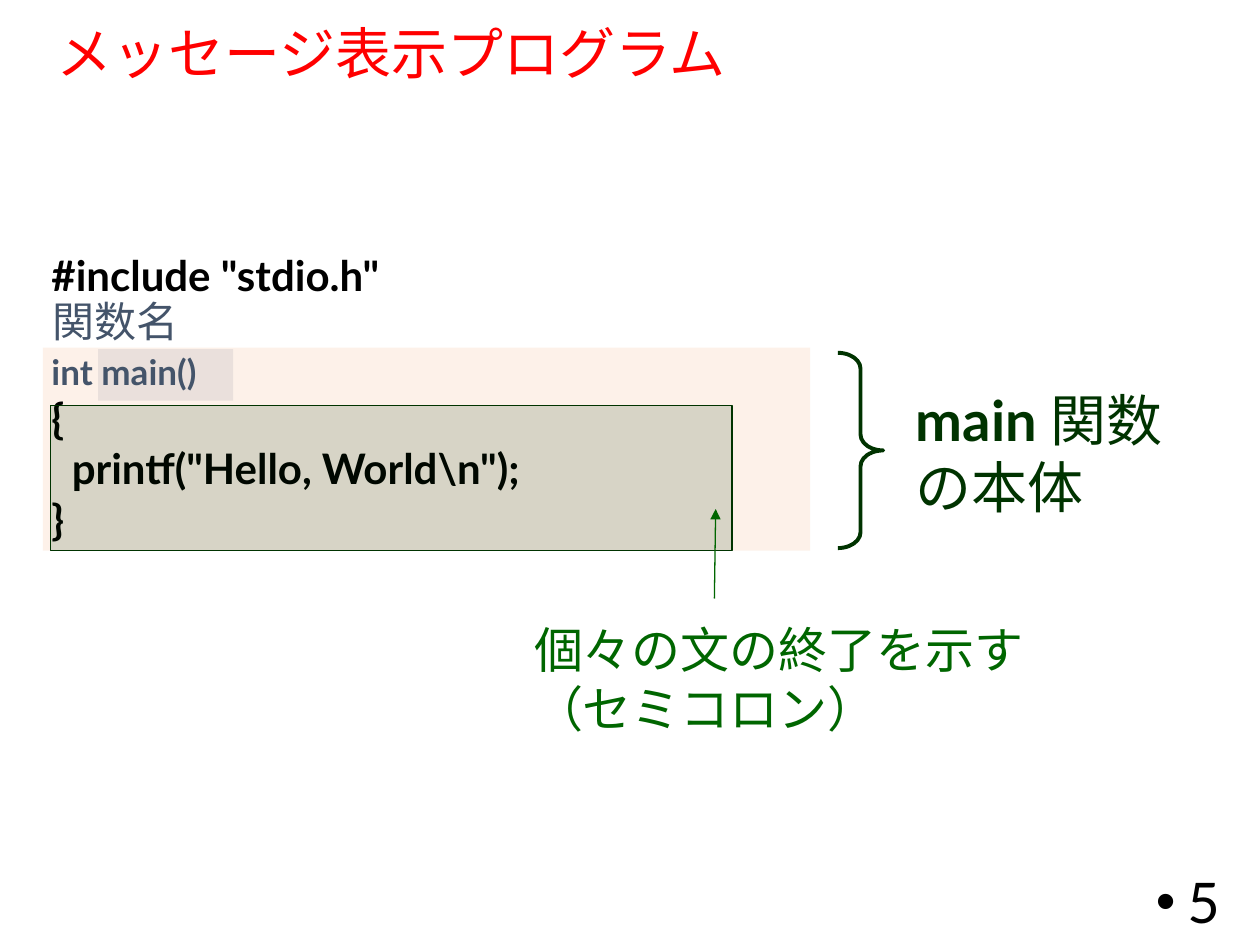
"""Build a slide that explains the parts of a small C program."""
from dataclasses import dataclass
from typing import Optional

import pptx
import pptx.dml.color
import pptx.enum.shapes
import pptx.enum.text
import pptx.oxml
import pptx.oxml.ns
import pptx.util

Inches = pptx.util.Inches
Pt = pptx.util.Pt
Anchor = pptx.enum.text.MSO_ANCHOR
Align = pptx.enum.text.PP_ALIGN
Shape = pptx.enum.shapes.MSO_SHAPE

FONT = "Lato"
BLACK, RED, ORANGE = "000000", "FF0000", "ED7D31"
SLATE, GREEN, DARK_GREEN = "44546A", "006600", "003300"


@dataclass
class Span:
    text: str
    size: float
    color: str
    bold: bool = False


@dataclass
class Region:
    left: float
    top: float
    width: float
    height: float
    color: str
    opacity: int
    outlined: bool = False


def rgb(color: str):
    """Return the colour for a hex string."""
    return pptx.dml.color.RGBColor.from_string(color)


def add_xml(parent, tag: str, **attributes: str):
    """Append a drawing element with the given attributes."""
    element = pptx.oxml.parse_xml(f"<a:{tag} {pptx.oxml.ns.nsdecls('a')}/>")
    for name, value in attributes.items():
        element.set(name, value)
    parent.append(element)
    return element


def add_region(page, region: Region) -> None:
    """Draw a translucent rectangle over part of the program."""
    shape = page.shapes.add_shape(
        Shape.RECTANGLE, Inches(region.left), Inches(region.top),
        Inches(region.width), Inches(region.height))
    shape.shadow.inherit = False
    shape.fill.solid()
    shape.fill.fore_color.rgb = rgb(region.color)
    fill_color = shape._element.spPr.find(".//" + pptx.oxml.ns.qn("a:srgbClr"))
    add_xml(fill_color, "alpha", val=str(region.opacity * 1000))
    if region.outlined:
        shape.line.color.rgb = rgb(region.color)
        shape.line.width = Pt(0.75)
    else:
        shape.line.fill.background()


def add_text(page, left: float, top: float, width: float, height: float,
             lines: list[list[Span]], *, wrap: bool = False,
             anchor=Anchor.TOP, align=Align.LEFT, spacing: float = 1.0,
             bullet: Optional[str] = None,
             gaps: Optional[dict[int, float]] = None) -> None:
    """Add a text box whose lines are lists of formatted spans."""
    box = page.shapes.add_textbox(
        Inches(left), Inches(top), Inches(width), Inches(height))
    frame = box.text_frame
    frame.word_wrap = wrap
    frame.vertical_anchor = anchor
    for index, spans in enumerate(lines):
        para = frame.add_paragraph() if index else frame.paragraphs[0]
        para.alignment = align
        para.line_spacing = spacing
        if gaps and index in gaps:
            para.space_before = Pt(gaps[index])
        if bullet:
            properties = para._p.get_or_add_pPr()
            properties.set("marL", str(Inches(0.25)))
            properties.set("indent", str(-Inches(0.25)))
            add_xml(properties, "buFont", typeface="Arial")
            add_xml(properties, "buChar", char=bullet)
        for span in spans:
            run = para.add_run()
            run.text = span.text
            run.font.name = FONT
            run.font.size = Pt(span.size)
            run.font.bold = span.bold
            run.font.color.rgb = rgb(span.color)


def add_arrow(page, start: tuple[float, float], end: tuple[float, float],
              color: str) -> None:
    """Draw a thin line with an arrowhead at its end."""
    arrow = page.shapes.add_connector(
        pptx.enum.shapes.MSO_CONNECTOR.STRAIGHT,
        *map(Inches, start), *map(Inches, end))
    arrow.line.color.rgb = rgb(color)
    arrow.line.width = Pt(0.75)
    add_xml(arrow.line._get_or_add_ln(), "tailEnd", type="triangle")
    add_xml(arrow._element.spPr, "effectLst")


def add_brace(page, left: float, top: float, width: float, height: float,
              color: str) -> None:
    """Draw the right brace that spans the function."""
    brace = page.shapes.add_shape(
        Shape.RIGHT_BRACE, Inches(left), Inches(top),
        Inches(width), Inches(height))
    brace.shadow.inherit = False
    brace.adjustments[0] = 0.35
    brace.adjustments[1] = 0.5
    brace.fill.background()
    brace.line.color.rgb = rgb(color)
    brace.line.width = Pt(2.25)


def main() -> None:
    """Build the slide and save the deck."""
    deck = pptx.Presentation()
    deck.slide_width, deck.slide_height = Inches(10), Inches(7.5)
    page = deck.slides.add_slide(deck.slide_layouts[6])

    add_region(page, Region(0.34, 2.76, 6.09, 1.61, ORANGE, 10))
    code = [
        Span('#include "stdio.h"', 24, BLACK, True),
        Span("int main()", 20, SLATE, True),
        Span("{", 24, BLACK, True),
        Span('  printf("Hello, World\\n");', 24, BLACK, True),
        Span("}", 24, BLACK, True),
    ]
    add_text(page, 0.31, 1.93, 9.34, 2.46, [[span] for span in code],
             wrap=True, gaps={1: 29})
    add_region(page, Region(0.4, 3.22, 5.41, 1.15, DARK_GREEN, 15, True))

    add_text(page, 0.35, 0.19, 9.25, 0.51,
             [[Span("メッセージ表示プログラム", 32, RED)]],
             wrap=True, anchor=Anchor.MIDDLE, spacing=0.9)
    add_text(page, 7.53, 6.95, 2.25, 0.4, [[Span("5", 32, BLACK)]],
             wrap=True, anchor=Anchor.MIDDLE, align=Align.RIGHT, bullet="•")
    add_text(page, 7.17, 3.01, 2.29, 1.18, [
        [Span("main ", 32, DARK_GREEN, True), Span("関数", 32, DARK_GREEN)],
        [Span("の本体", 32, DARK_GREEN)],
    ])
    add_arrow(page, (5.67, 4.75), (5.68, 4.04), GREEN)
    add_text(page, 4.14, 4.87, 4.13, 1.04, [
        [Span("個々の文の終了を示す", 28, GREEN)],
        [Span("（セミコロン）", 28, GREEN)],
    ])
    add_region(page, Region(0.78, 2.77, 1.07, 0.41, SLATE, 10))
    add_text(page, 0.32, 2.3, 1.2, 0.5, [[Span("関数名", 24, SLATE)]])
    add_brace(page, 6.65, 2.8, 0.36, 1.55, DARK_GREEN)

    deck.save("out.pptx")


if __name__ == "__main__":
    main()
